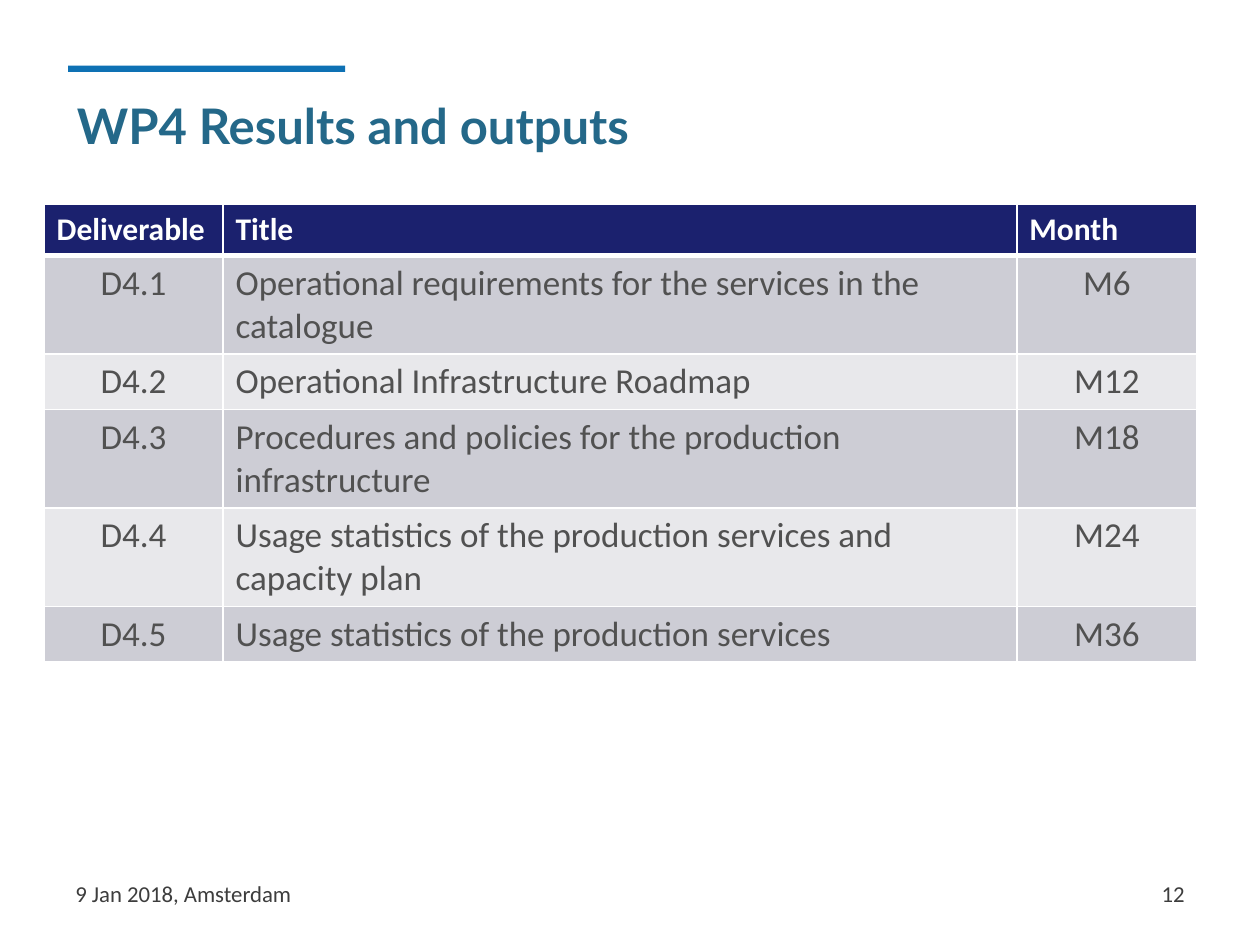
from dataclasses import dataclass

from lxml import etree
from pptx import Presentation
from pptx.dml.color import RGBColor
from pptx.enum.shapes import MSO_SHAPE
from pptx.enum.text import MSO_ANCHOR, MSO_AUTO_SIZE, PP_ALIGN
from pptx.oxml.ns import qn
from pptx.util import Inches, Pt

LEFT, CENTER, RIGHT = PP_ALIGN.LEFT, PP_ALIGN.CENTER, PP_ALIGN.RIGHT
MIDDLE = MSO_ANCHOR.MIDDLE
NO_FIT = MSO_AUTO_SIZE.NONE
RECTANGLE = MSO_SHAPE.RECTANGLE

WHITE = RGBColor(0xFF, 0xFF, 0xFF)
ACCENT_BLUE = RGBColor(0x0E, 0x71, 0xB4)
TITLE_BLUE = RGBColor(0x24, 0x68, 0x89)
HEADER_NAVY = RGBColor(0x1B, 0x21, 0x6E)
BAND_DARK = RGBColor(0xCD, 0xCD, 0xD5)
BAND_LIGHT = RGBColor(0xE8, 0xE8, 0xEB)
CELL_GREY = RGBColor(0x51, 0x51, 0x51)
FOOTER_GREY = RGBColor(0x3D, 0x3D, 0x3D)

HEADERS = ("Deliverable", "Title", "Month")
COLUMN_WIDTHS = (1.42, 6.3, 1.43)
COLUMN_ALIGNS = (CENTER, LEFT, CENTER)
ROW_HEIGHT = 0.41
TABLE_LEFT, TABLE_TOP = 0.35, 1.62
FOOTER_TOP, FOOTER_WIDTH, FOOTER_HEIGHT = 6.89, 2.33, 0.4


@dataclass(frozen=True)
class TextStyle:
    font: str
    size: int
    color: RGBColor
    bold: bool = False


@dataclass(frozen=True)
class Deliverable:
    code: str
    title: str
    month: str


TITLE_STYLE = TextStyle("Lato", 28, TITLE_BLUE, True)
HEADER_STYLE = TextStyle("Calibri", 18, WHITE, True)
CELL_STYLE = TextStyle("Calibri", 20, CELL_GREY)
FOOTER_STYLE = TextStyle("Calibri", 13, FOOTER_GREY)

DELIVERABLES = (
    Deliverable("D4.1", "Operational requirements for the services in the catalogue", "M6"),
    Deliverable("D4.2", "Operational Infrastructure Roadmap", "M12"),
    Deliverable("D4.3", "Procedures and policies for the production infrastructure", "M18"),
    Deliverable("D4.4", "Usage statistics of the production services and capacity plan", "M24"),
    Deliverable("D4.5", "Usage statistics of the production services", "M36"),
)


def write(frame, text: str, style: TextStyle, align=LEFT) -> None:
    frame.text = text
    para = frame.paragraphs[0]
    para.alignment = align
    font = para.runs[0].font
    font.name, font.size, font.bold = style.font, Pt(style.size), style.bold
    font.color.rgb = style.color


def set_borders(cell, bottom_width: int) -> None:
    """Draw white cell borders; they must come before the fill in the XML."""
    properties = cell._tc.get_or_add_tcPr()
    widths = {"a:lnL": 1, "a:lnR": 1, "a:lnT": 1, "a:lnB": bottom_width}
    for position, (tag, width) in enumerate(widths.items()):
        line = etree.Element(qn(tag), w=str(Pt(width)))
        fill = etree.SubElement(line, qn("a:solidFill"))
        etree.SubElement(fill, qn("a:srgbClr"), val=str(WHITE))
        properties.insert(position, line)


def fill_cell(cell, text: str, style: TextStyle, align, color: RGBColor,
              bottom_width: int = 1) -> None:
    write(cell.text_frame, text, style, align)
    cell.fill.solid()
    cell.fill.fore_color.rgb = color
    set_borders(cell, bottom_width)


def add_title(page, text: str) -> None:
    title = page.shapes.title
    title.left, title.top = Inches(0.51), Inches(0.68)
    title.width, title.height = Inches(5.98), Inches(0.63)
    frame = title.text_frame
    frame.auto_size, frame.vertical_anchor = NO_FIT, MIDDLE
    write(frame, text, TITLE_STYLE)


def add_accent_bar(page) -> None:
    bar = page.shapes.add_shape(RECTANGLE, Inches(0.54), Inches(0.52),
                                Inches(2.2), Inches(0.05))
    bar.shadow.inherit = False
    bar.fill.solid()
    bar.fill.fore_color.rgb = ACCENT_BLUE
    bar.line.fill.background()


def add_footer(page, left: float, text: str, align) -> None:
    box = page.shapes.add_textbox(Inches(left), Inches(FOOTER_TOP),
                                  Inches(FOOTER_WIDTH), Inches(FOOTER_HEIGHT))
    box.text_frame.word_wrap = True
    box.text_frame.vertical_anchor = MIDDLE
    write(box.text_frame, text, FOOTER_STYLE, align)


def add_deliverables(page) -> None:
    row_count = len(DELIVERABLES) + 1
    table = page.shapes.add_table(
        row_count, len(HEADERS), Inches(TABLE_LEFT), Inches(TABLE_TOP),
        Inches(sum(COLUMN_WIDTHS)), Inches(ROW_HEIGHT * row_count)).table
    for column, width in zip(table.columns, COLUMN_WIDTHS):
        column.width = Inches(width)

    # Header row with a heavier rule below
    for column, text in enumerate(HEADERS):
        fill_cell(table.cell(0, column), text, HEADER_STYLE, LEFT, HEADER_NAVY, 3)

    # Banded body rows
    for row, item in enumerate(DELIVERABLES, start=1):
        band = BAND_DARK if row % 2 else BAND_LIGHT
        values = (item.code, item.title, item.month)
        for column, (text, align) in enumerate(zip(values, COLUMN_ALIGNS)):
            fill_cell(table.cell(row, column), text, CELL_STYLE, align, band)


def main() -> None:
    deck = Presentation()
    deck.slide_width, deck.slide_height = Inches(10), Inches(7.5)
    page = deck.slides.add_slide(deck.slide_layouts.get_by_name("Title Only"))
    add_accent_bar(page)
    add_title(page, "WP4 Results and outputs")
    add_deliverables(page)
    add_footer(page, 0.5, "9 Jan 2018, Amsterdam", LEFT)
    add_footer(page, 7.17, "12", RIGHT)
    deck.save("out.pptx")


if __name__ == "__main__":
    main()
